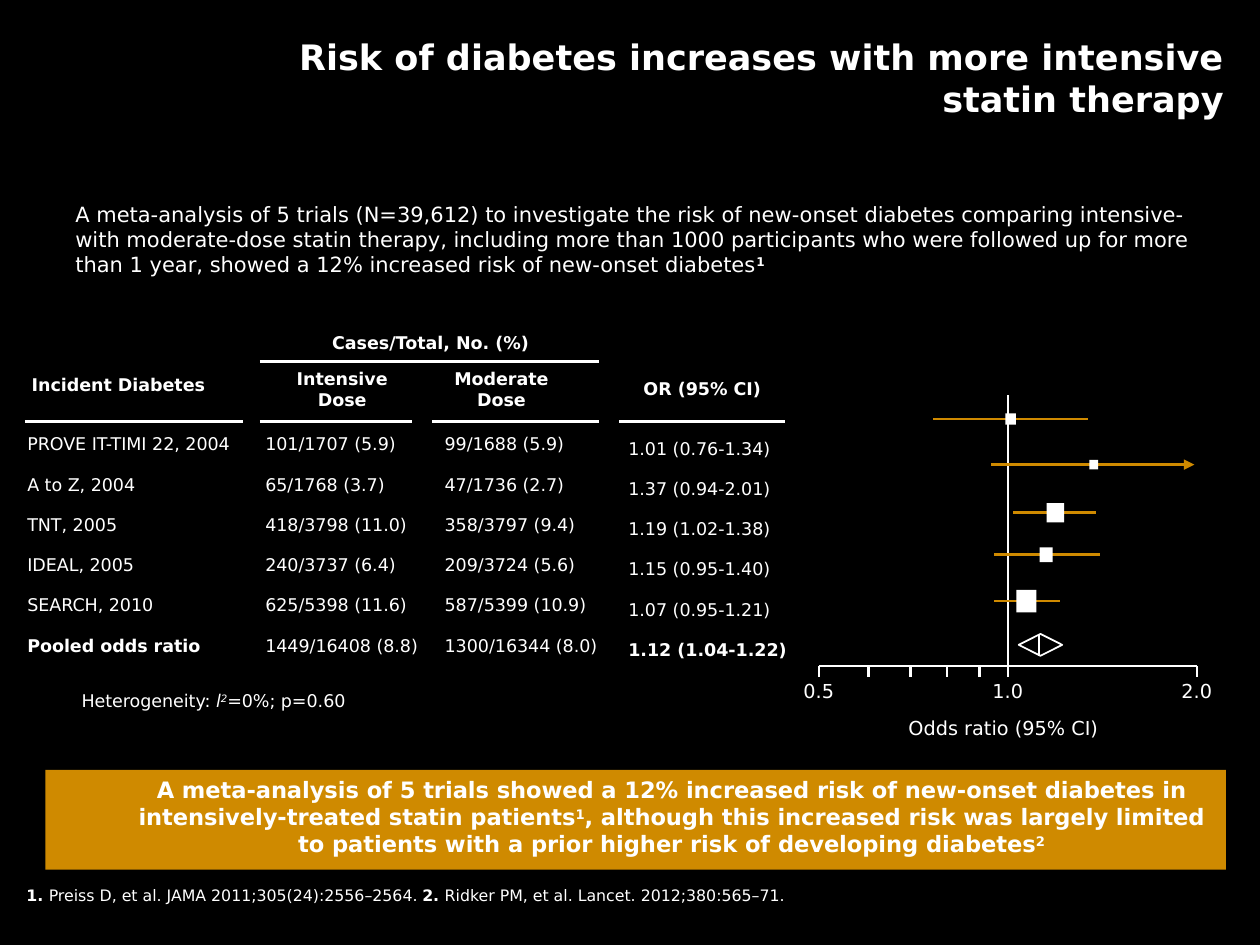
from dataclasses import dataclass
from math import log2

from pptx import Presentation
from pptx.dml.color import RGBColor
from pptx.enum.shapes import MSO_CONNECTOR as Connector, MSO_SHAPE as Shape
from pptx.enum.text import MSO_ANCHOR as Anchor, PP_ALIGN as Align
from pptx.oxml.ns import qn
from pptx.oxml.xmlchemy import OxmlElement
from pptx.util import Pt


@dataclass(frozen=True)
class Theme:
    font: str = "DejaVu Sans"
    background: RGBColor = RGBColor(0x00, 0x00, 0x00)
    white: RGBColor = RGBColor(0xFF, 0xFF, 0xFF)
    gold: RGBColor = RGBColor(0xCF, 0x8A, 0x00)
    title: float = 20
    banner: float = 12.9
    intro: float = 12
    axis: float = 11
    table: float = 10
    reference: float = 9
    rule: float = 1.5
    outline: float = 1


BOLD = {"bold": True}
SUPER = {"baseline": 30}

# Trial, intensive dose, moderate dose, (odds ratio, low, high), line height, marker size
STUDIES = [
    ("PROVE IT-TIMI 22, 2004", "101/1707 (5.9)", "99/1688 (5.9)", (1.01, 0.76, 1.34), 239.5, (6, 6.5)),
    ("A to Z, 2004", "65/1768 (3.7)", "47/1736 (2.7)", (1.37, 0.94, 2.01), 265.5, (5, 5.5)),
    ("TNT, 2005", "418/3798 (11.0)", "358/3797 (9.4)", (1.19, 1.02, 1.38), 293, (10, 11)),
    ("IDEAL, 2005", "240/3737 (6.4)", "209/3724 (5.6)", (1.15, 0.95, 1.40), 317, (7.5, 8.5)),
    ("SEARCH, 2010", "625/5398 (11.6)", "587/5399 (10.9)", (1.07, 0.95, 1.21), 343.5, (11.5, 13)),
]
POOLED = ("Pooled odds ratio", "1449/16408 (8.8)", "1300/16344 (8.0)", (1.12, 1.04, 1.22), 368.5, (0, 12.5))
AXIS_Y = 380.5
AXIS_MAX = 2.0


class SlideBuilder:
    def __init__(self, slide, theme):
        self.slide = slide
        self.theme = theme
        background = slide.background.fill
        background.solid()
        background.fore_color.rgb = theme.background

    def fill_text(self, frame, paragraphs, size, align=Align.LEFT, after=0, indent=0):
        """Each paragraph is a list of (text, format) runs."""
        for index, runs in enumerate(paragraphs):
            paragraph = frame.paragraphs[0] if index == 0 else frame.add_paragraph()
            paragraph.alignment = align
            paragraph.space_after = Pt(after)
            if indent:
                paragraph._p.get_or_add_pPr().set("marL", str(Pt(indent)))
            for text, extra in runs:
                run = paragraph.add_run()
                run.text = text
                values = {"name": self.theme.font, "size": Pt(size), **extra}
                baseline = values.pop("baseline", 0)
                for name, value in values.items():
                    setattr(run.font, name, value)
                run.font.color.rgb = self.theme.white
                if baseline:
                    run._r.get_or_add_rPr().set("baseline", str(baseline * 1000))

    def text(self, box, paragraphs, size, wrap=False, anchor=Anchor.TOP, **layout):
        frame = self.slide.shapes.add_textbox(*map(Pt, box)).text_frame
        frame.word_wrap = wrap
        frame.vertical_anchor = anchor
        self.fill_text(frame, paragraphs, size, **layout)

    def shape(self, kind, box, fill=None, line=None):
        shape = self.slide.shapes.add_shape(kind, *map(Pt, box))
        shape.shadow.inherit = False
        if fill is None:
            shape.fill.background()
        else:
            shape.fill.solid()
            shape.fill.fore_color.rgb = fill
        if line is None:
            shape.line.fill.background()
        else:
            shape.line.color.rgb = line
            shape.line.width = Pt(self.theme.outline)
        return shape

    def line(self, start, end, color=None, width=None, arrow=False):
        line = self.slide.shapes.add_connector(Connector.STRAIGHT, *map(Pt, (*start, *end)))
        line.line.color.rgb = color or self.theme.white
        line.line.width = Pt(width or self.theme.rule)
        properties = line._element.find(qn("p:spPr"))
        if arrow:
            tail = OxmlElement("a:tailEnd")
            tail.set("type", "triangle")
            properties.find(qn("a:ln")).append(tail)
        properties.append(OxmlElement("a:effectLst"))


def odds_x(ratio):
    """Place an odds ratio on the logarithmic axis."""
    return 576 + 108 * log2(ratio)


def add_table(builder):
    theme = builder.theme
    studies = [*STUDIES, POOLED]
    estimates = ["{:.2f} ({:.2f}-{:.2f})".format(*study[3]) for study in studies]
    # Left, top, width, cells, bold last row
    columns = [
        (8.5, 244, 140.5, [study[0] for study in studies], True),
        (144.5, 244, 106, [study[1] for study in studies], False),
        (247, 244, 106, [study[2] for study in studies], False),
        (352, 246.5, 108.5, estimates, True),
    ]
    for left, top, width, cells, bold_last in columns:
        paragraphs = [[(cell, {})] for cell in cells[:-1]]
        paragraphs.append([(cells[-1], {"bold": bold_last})])
        builder.text((left, top, width, 151), paragraphs, theme.table, after=11)

    # Headings
    headings = [
        ("Incident Diabetes", (11, 210, 115, 21.5), False, Align.LEFT),
        ("Intensive Dose", (156, 206.5, 79, 35.5), True, Align.CENTER),
        ("Moderate Dose", (247, 206.5, 79, 35.5), True, Align.CENTER),
        ("OR (95% CI)", (354, 212.5, 94.5, 21.5), True, Align.CENTER),
        ("Cases/Total, No. (%)", (178, 186, 136, 21.5), False, Align.CENTER),
    ]
    for label, box, wrap, align in headings:
        builder.text(box, [[(label, BOLD)]], theme.table, wrap=wrap, align=align)

    # Rules
    rules = [(14.5, 139, 241), (148.5, 235.5, 241), (247, 342.5, 241), (354, 448.5, 241), (148.5, 342.5, 206.5)]
    for left, right, y in rules:
        builder.line((left, y), (right, y))

    heterogeneity = [("Heterogeneity: ", {}), ("l", {"italic": True}),
                     ("2", {"italic": True, **SUPER}), ("=0%; p=0.60", {})]
    builder.text((39.5, 391, 173, 19.5), [heterogeneity], theme.table)


def add_forest_plot(builder):
    theme = builder.theme
    # Axis
    builder.line((odds_x(0.5), AXIS_Y), (odds_x(AXIS_MAX), AXIS_Y))
    for ratio in (0.5, 0.6, 0.7, 0.8, 0.9, 1.0, 2.0):
        top = 226 if ratio == 1 else AXIS_Y
        builder.line((odds_x(ratio), top), (odds_x(ratio), AXIS_Y + 6.5))
    for ratio in (0.5, 1.0, 2.0):
        builder.text((odds_x(ratio) - 16, 384.5, 32.5, 23), [[(f"{ratio:.1f}", {})]], theme.axis)
    builder.text((512, 406, 129, 23), [[("Odds ratio (95% CI)", {})]], theme.axis)

    # Trials
    for *_, (ratio, low, high), y, (width, height) in STUDIES:
        end = min(high, AXIS_MAX)
        builder.line((odds_x(low), y), (odds_x(end) - (1.5 if high > end else 0), y),
                     theme.gold, arrow=high > end)
        box = (odds_x(ratio) - width / 2, y - height / 2, width, height)
        builder.shape(Shape.RECTANGLE, box, fill=theme.white)

    # Pooled estimate
    *_, (ratio, low, high), y, (_, height) = POOLED
    top = y - height / 2
    builder.shape(Shape.DIAMOND, (odds_x(low), top, odds_x(high) - odds_x(low), height), line=theme.white)
    builder.line((odds_x(ratio), top), (odds_x(ratio), top + height), width=theme.outline)


def main():
    presentation = Presentation()
    presentation.slide_width, presentation.slide_height = Pt(720), Pt(540)
    theme = Theme()
    builder = SlideBuilder(presentation.slides.add_slide(presentation.slide_layouts[6]), theme)

    # Title and introduction
    builder.text((111, -0.5, 595.5, 90),
                 [[("Risk of diabetes increases with more intensive statin therapy", BOLD)]],
                 theme.title, wrap=True, anchor=Anchor.MIDDLE, align=Align.RIGHT)
    intro = ("A meta-analysis of 5 trials (N=39,612) to investigate the risk of new-onset diabetes "
             "comparing intensive- with moderate-dose statin therapy, including more than 1000 "
             "participants who were followed up for more than 1 year, showed a 12% increased risk "
             "of new-onset diabetes")
    builder.text((36, 111.5, 659, 65.5), [[(intro, {}), ("1", {**BOLD, **SUPER})]], theme.intro, wrap=True)

    add_table(builder)
    add_forest_plot(builder)

    # Conclusion banner
    banner = builder.shape(Shape.RECTANGLE, (26, 440, 674.5, 57), fill=theme.gold)
    frame = banner.text_frame
    frame.word_wrap = True
    frame.vertical_anchor = Anchor.TOP
    conclusion = [
        ("A meta-analysis of 5 trials showed a 12% increased risk of new-onset diabetes in "
         "intensively-treated statin patients", BOLD),
        ("1", {**BOLD, **SUPER}),
        (", although this increased risk was largely limited to patients with a prior higher "
         "risk of developing diabetes", BOLD),
        ("2", {**BOLD, **SUPER}),
    ]
    builder.fill_text(frame, [conclusion], theme.banner, align=Align.CENTER, indent=41)

    # References
    references = [("1. ", BOLD), ("Preiss D, et al. JAMA 2011;305(24):2556–2564. ", {}),
                  ("2. ", BOLD), ("Ridker PM, et al. Lancet. 2012;380:565–71.", {})]
    builder.text((8, 502.5, 474, 18), [references], theme.reference)

    presentation.save("out.pptx")


if __name__ == "__main__":
    main()
